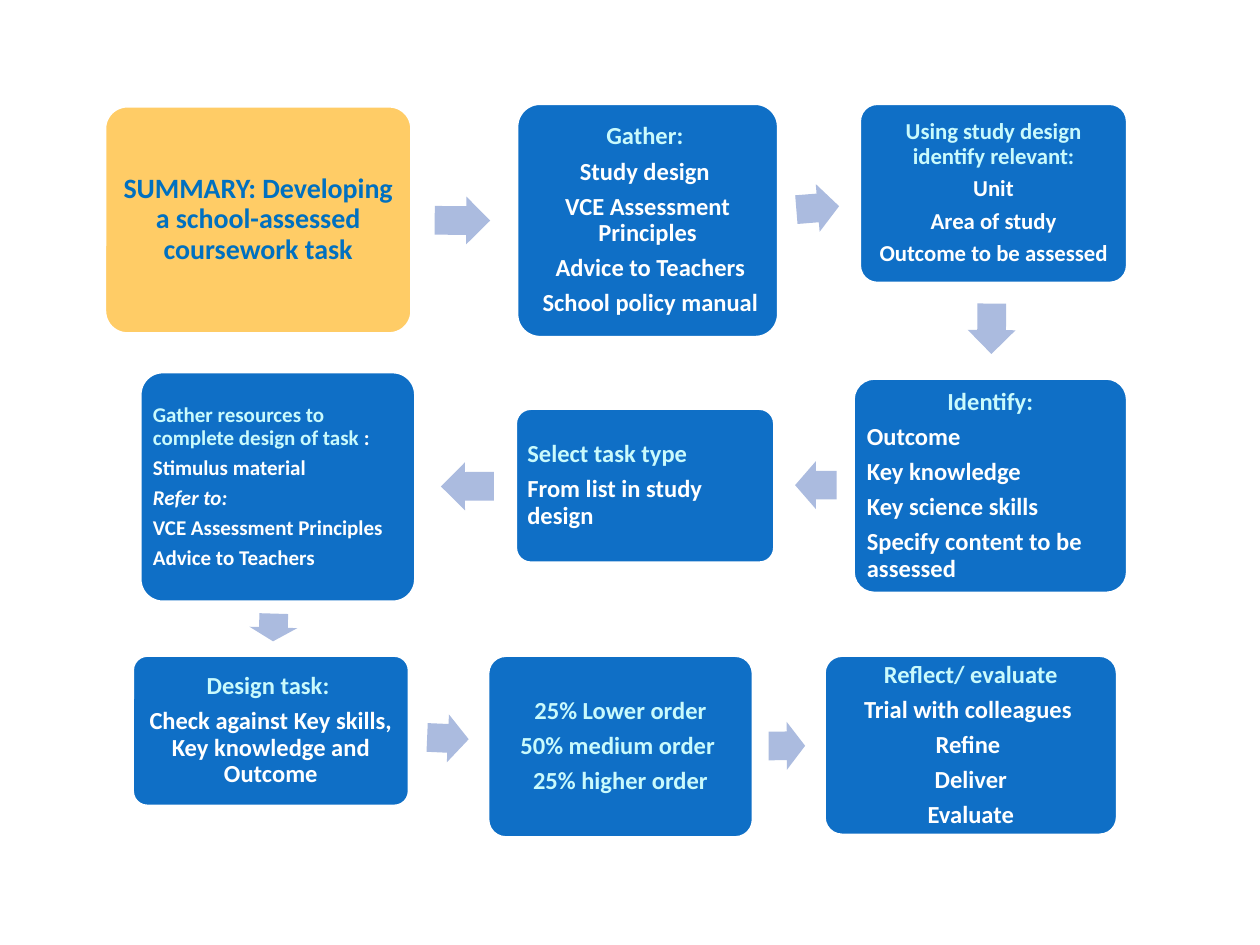
"""Build a one-slide flow chart on developing a school-assessed coursework task."""
from dataclasses import dataclass

from pptx import Presentation
from pptx.dml.color import RGBColor
from pptx.enum.shapes import MSO_SHAPE
from pptx.enum.text import MSO_ANCHOR, PP_ALIGN
from pptx.util import Inches, Pt

BLUE, GOLD, PALE, WHITE = "0F6FC6", "FFCC66", "C9FAFC", "FFFFFF"
INK, ARROW = "0070C0", "ABBBDF"
MID, LEFT = PP_ALIGN.CENTER, PP_ALIGN.LEFT


@dataclass
class Card:
    """A rounded step box with head lines and body lines."""
    box: tuple[float, float, float, float]
    heads: list[str]
    body: list[str]
    size: int = 14
    pad: float = 0.06
    fill: str = BLUE
    color: str = PALE
    head_side: PP_ALIGN = MID
    body_side: PP_ALIGN = MID
    tail: str = ""
    slant: str = ""


@dataclass
class Arrow:
    """A block arrow between two steps."""
    left: float
    top: float
    width: float
    turn: float


CARDS = [
    Card((0.83, 0.84, 2.44, 1.81),
         ["SUMMARY: Developing a school-assessed coursework task"], [],
         size=16, pad=0.07, fill=GOLD, color=INK),
    Card((4.1, 0.82, 2.08, 1.86), ["Gather: "],
         ["Study design ", "VCE Assessment Principles",
          " Advice to Teachers", " School policy manual"]),
    Card((6.82, 0.82, 2.13, 1.43), ["Using study design identify relevant:"],
         ["Unit", "Area of study", "Outcome to be assessed"],
         size=13, pad=0.05),
    Card((6.77, 3, 2.18, 1.71), ["Identify:"],
         ["Outcome", "Key knowledge", "Key science skills",
          "Specify content to be assessed"], body_side=LEFT),
    Card((4.09, 3.24, 2.06, 1.23), ["Select task type"],
         ["From list in study design"], head_side=LEFT, body_side=LEFT),
    Card((1.11, 2.95, 2.19, 1.83),
         ["Gather resources to complete design of task "],
         ["Stimulus material", "Refer to:", "VCE Assessment Principles",
          "Advice to Teachers"],
         size=12, pad=0.05, head_side=LEFT, body_side=LEFT,
         tail=":", slant="Refer to:"),
    Card((1.05, 5.2, 2.2, 1.2), ["Design task: "],
         ["Check against Key skills, Key knowledge and Outcome"]),
    Card((3.87, 5.2, 2.11, 1.45),
         ["25% Lower order", "50% medium order ", "25% higher order"], []),
    Card((6.54, 5.2, 2.33, 1.43), ["Reflect/ evaluate"],
         ["Trial with colleagues ", "Refine ", "Deliver", "Evaluate"]),
]

ARROWS = [
    Arrow(3.45, 1.56, 0.44, 0.3),
    Arrow(6.32, 1.46, 0.34, 355.4),
    Arrow(7.67, 2.42, 0.4, 90.6),
    Arrow(6.31, 3.66, 0.33, 180),
    Arrow(3.5, 3.67, 0.42, 179.8),
    Arrow(2.06, 4.79, 0.22, 91.7),
    Arrow(3.39, 5.67, 0.33, 2.5),
    Arrow(6.1, 5.73, 0.29, 359.8),
]


def rgb(code: str) -> RGBColor:
    """Turn a hex string into a colour."""
    return RGBColor.from_string(code)


def add_form(slide, kind, box, fill: str):
    """Add a flat filled shape."""
    form = slide.shapes.add_shape(kind, *map(Inches, box))
    form.shadow.inherit = False
    form.fill.solid()
    form.fill.fore_color.rgb = rgb(fill)
    return form


def style(run, size: int, color: str, slant: bool = False) -> None:
    """Format one run of card text."""
    font = run.font
    font.name, font.size, font.bold = "Calibri", Pt(size), True
    font.italic = slant
    font.color.rgb = rgb(color)


def draw_card(slide, card: Card) -> None:
    """Draw a step box and its text."""
    form = add_form(slide, MSO_SHAPE.ROUNDED_RECTANGLE, card.box, card.fill)
    form.adjustments[0] = 0.1
    form.line.color.rgb = rgb(WHITE)
    form.line.width = Pt(2)
    frame = form.text_frame
    frame.word_wrap = True
    frame.vertical_anchor = MSO_ANCHOR.MIDDLE
    frame.margin_left = frame.margin_right = Inches(card.pad)
    frame.margin_top = frame.margin_bottom = Inches(card.pad)
    frame.text = "\n".join(card.heads + card.body)
    for spot, para in enumerate(frame.paragraphs):
        head = spot < len(card.heads)
        para.alignment = card.head_side if head else card.body_side
        para.line_spacing = 0.9
        para.space_after = Pt(round(card.size * 0.35, 1))
        style(para.runs[0], card.size, card.color if head else WHITE,
              para.text == card.slant)
    if card.tail:
        run = frame.paragraphs[0].add_run()
        run.text = card.tail
        style(run, card.size, WHITE)


def draw_arrow(slide, arrow: Arrow) -> None:
    """Draw a turned block arrow."""
    box = (arrow.left, arrow.top, arrow.width, 0.38)
    form = add_form(slide, MSO_SHAPE.RIGHT_ARROW, box, ARROW)
    form.line.fill.background()
    form.adjustments[0] = 0.6
    form.adjustments[1] = 0.5
    form.rotation = arrow.turn


def main() -> None:
    """Build and save the deck."""
    deck = Presentation()
    deck.slide_width, deck.slide_height = Inches(10), Inches(7.5)
    slide = deck.slides.add_slide(deck.slide_layouts[6])
    for card in CARDS:
        draw_card(slide, card)
    for arrow in ARROWS:
        draw_arrow(slide, arrow)
    deck.save("out.pptx")


if __name__ == "__main__":
    main()
